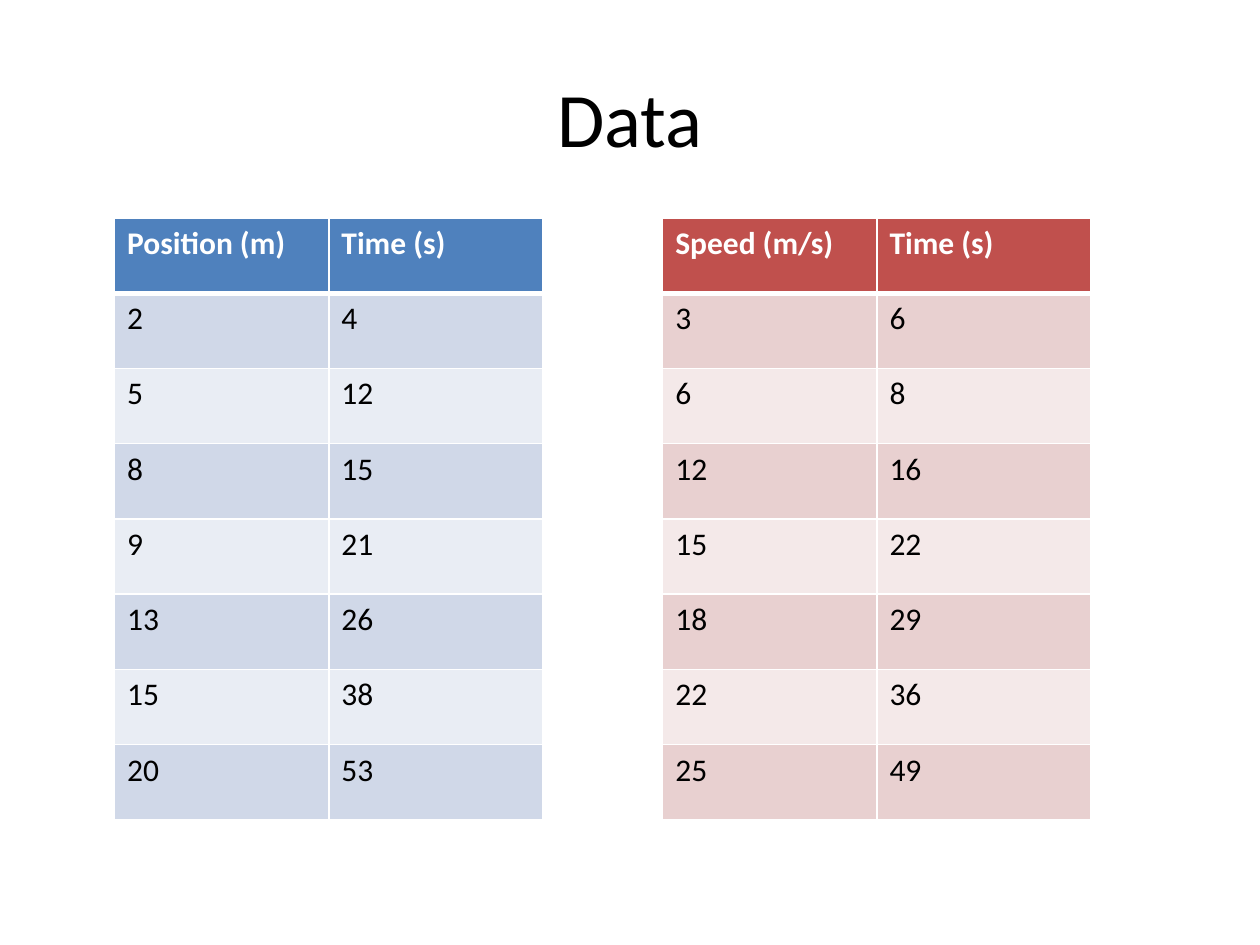
from lxml.etree import SubElement
from pptx import Presentation
from pptx.dml.color import RGBColor
from pptx.enum.text import MSO_ANCHOR, PP_ALIGN
from pptx.oxml.ns import qn
from pptx.util import Inches, Pt

COLORS = {
    "text": "000000",
    "white": "FFFFFF",
    "blue": ("4F81BD", "D0D8E8", "E9EDF4"),
    "red": ("C0504D", "E8D0D0", "F4E9E9"),
}
TABLES = [
    (0.91, "blue", [
        ("Position (m)", "Time (s)"),
        (2, 4), (5, 12), (8, 15), (9, 21), (13, 26), (15, 38), (20, 53),
    ]),
    (5.26, "red", [
        ("Speed (m/s)", "Time (s)"),
        (3, 6), (6, 8), (12, 16), (15, 22), (18, 29), (22, 36), (25, 49),
    ]),
]


def write(para, text, color, **font_format):
    """Put one formatted Calibri run into a paragraph."""
    span = para.add_run()
    span.text = text
    span.font.color.rgb = RGBColor.from_string(color)
    for name, value in {"name": "Calibri", **font_format}.items():
        setattr(span.font, name, value)


def add_border(cell, side, width):
    properties = cell._tc.get_or_add_tcPr()
    line = SubElement(properties, qn(f"a:{side}"), w=str(Pt(width)))
    fill = SubElement(line, qn("a:solidFill"))
    SubElement(fill, qn("a:srgbClr"), val=COLORS["white"])


deck = Presentation()
deck.slide_width, deck.slide_height = Inches(10), Inches(7.5)
page = deck.slides.add_slide(deck.slide_layouts[6])

# Title
title = page.shapes.add_textbox(Inches(0.5), Inches(0.3), Inches(9), Inches(1.25))
frame = title.text_frame
frame.word_wrap = True
frame.vertical_anchor = MSO_ANCHOR.MIDDLE
frame.paragraphs[0].alignment = PP_ALIGN.CENTER
write(frame.paragraphs[0], "Data", COLORS["text"], size=Pt(44))

# Data tables: a header row, then rows in alternating tints
for left, palette, rows in TABLES:
    header_fill, dark_tint, light_tint = COLORS[palette]
    table = page.shapes.add_table(
        len(rows), 2, Inches(left), Inches(1.73), Inches(3.4), Inches(4.78)
    ).table
    for row_index, row in enumerate(rows):
        is_header = row_index == 0
        tint = dark_tint if row_index % 2 else light_tint
        widths = {
            "lnL": 1,
            "lnR": 1,
            "lnT": 3 if row_index == 1 else 1,
            "lnB": 3 if is_header else 1,
        }
        for column_index, value in enumerate(row):
            cell = table.cell(row_index, column_index)
            for side, width in widths.items():
                add_border(cell, side, width)
            cell.fill.solid()
            cell.fill.fore_color.rgb = RGBColor.from_string(header_fill if is_header else tint)
            color = COLORS["white" if is_header else "text"]
            write(cell.text_frame.paragraphs[0], str(value), color, size=Pt(18), bold=is_header)

deck.save("out.pptx")
